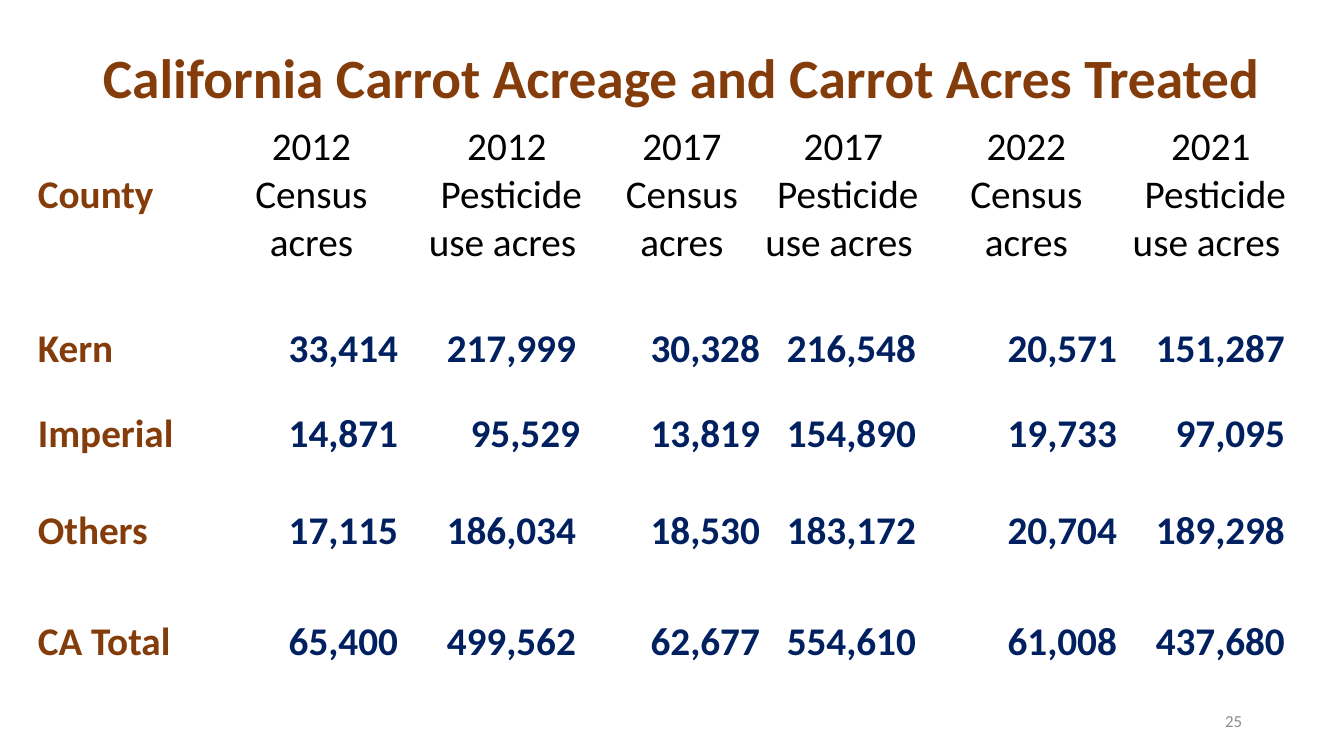
import pptx
import pptx.dml.color
import pptx.enum.text
import pptx.util

# Content
TITLE = "California Carrot Acreage and Carrot Acres Treated"
PAGE_NUMBER = "25"
CENSUS = "Census acres"
PESTICIDE = " Pesticide use acres "
ROWS = [
    ["", "2012", "2012", "2017", "2017", "2022", "2021"],
    ["County"] + [CENSUS, PESTICIDE] * 3,
    ["Kern", "33,414", "217,999", "30,328", "216,548", "20,571", "151,287"],
    ["Imperial", "14,871", "95,529", "13,819", "154,890", "19,733", "97,095"],
    ["Others", "17,115", "186,034", "18,530", "183,172", "20,704", "189,298"],
    ["CA Total", "65,400", "499,562", "62,677", "554,610", "61,008", "437,680"],
]

# Style and layout, in px
COLORS = {"brown": "843C0B", "navy": "002060", "black": "000000", "gray": "8C8C8C"}
FONT = "Calibri"
EMU_PER_PX = 914400 / 100.8
HEADER_ROWS = 2
COLUMN_WIDTHS = [175, 199, 192, 158, 165, 201, 168]
ROW_HEIGHTS = [48, 107, 96, 85, 97, 111]
NUMBER_INSETS = [0, 13, 27, 1, 10, 10, 10]
SHORT_NUMBER_INSET = 23
ALIGN = pptx.enum.text.PP_ALIGN
ANCHOR = pptx.enum.text.MSO_ANCHOR


def px(length):
    return pptx.util.Emu(round(length * EMU_PER_PX))


def format_text(paragraph, size, color, bold=False, align=ALIGN.LEFT):
    paragraph.alignment = align
    for run in paragraph.runs:
        run.font.name = FONT
        run.font.size = pptx.util.Pt(size)
        run.font.bold = bold
        run.font.color.rgb = pptx.dml.color.RGBColor.from_string(COLORS[color])


def add_text(slide, box, text, size, color, bold=False, align=ALIGN.LEFT):
    text_frame = slide.shapes.add_textbox(*map(px, box)).text_frame
    text_frame.word_wrap = True
    text_frame.vertical_anchor = ANCHOR.MIDDLE
    text_frame.text = text
    paragraph = text_frame.paragraphs[0]
    format_text(paragraph, size, color, bold, align)
    return paragraph


def fill_cell(cell, text, row, column):
    is_header = row < HEADER_ROWS
    cell.fill.background()
    cell.margin_left = cell.margin_right = cell.margin_top = px(1)
    cell.margin_bottom = 0
    cell.vertical_anchor = ANCHOR.TOP if is_header else ANCHOR.BOTTOM
    cell.text_frame.text = text
    paragraph = cell.text_frame.paragraphs[0]
    if column == 0:
        format_text(paragraph, 28, "brown", True)
    elif is_header:
        format_text(paragraph, 28, "black", False, ALIGN.CENTER)
    else:
        format_text(paragraph, 28, "navy", True, ALIGN.RIGHT)
        is_short = column == 2 and len(text) < 7
        cell.margin_right = px(SHORT_NUMBER_INSET if is_short else NUMBER_INSETS[column])


def add_acreage_table(slide):
    frame = slide.shapes.add_table(
        len(ROWS), len(COLUMN_WIDTHS), px(37), px(122),
        px(sum(COLUMN_WIDTHS)), px(sum(ROW_HEIGHTS)))
    table = frame.table
    table.first_row = table.horz_banding = False
    for column, width in zip(table.columns, COLUMN_WIDTHS):
        column.width = px(width)
    for row, height in zip(table.rows, ROW_HEIGHTS):
        row.height = px(height)
    for row, texts in enumerate(ROWS):
        for column, text in enumerate(texts):
            fill_cell(table.cell(row, column), text, row, column)


def main():
    presentation = pptx.Presentation()
    presentation.slide_width = px(1344)
    presentation.slide_height = px(756)
    slide = presentation.slides.add_slide(presentation.slide_layouts[6])

    # Title, table and page number
    title = add_text(slide, (93, 40, 1203, 82), TITLE, 39.6, "brown", True)
    title.line_spacing = 0.9
    add_acreage_table(slide)
    add_text(slide, (950, 701, 302, 40), PAGE_NUMBER, 12, "gray", align=ALIGN.RIGHT)

    presentation.save("out.pptx")


if __name__ == "__main__":
    main()
